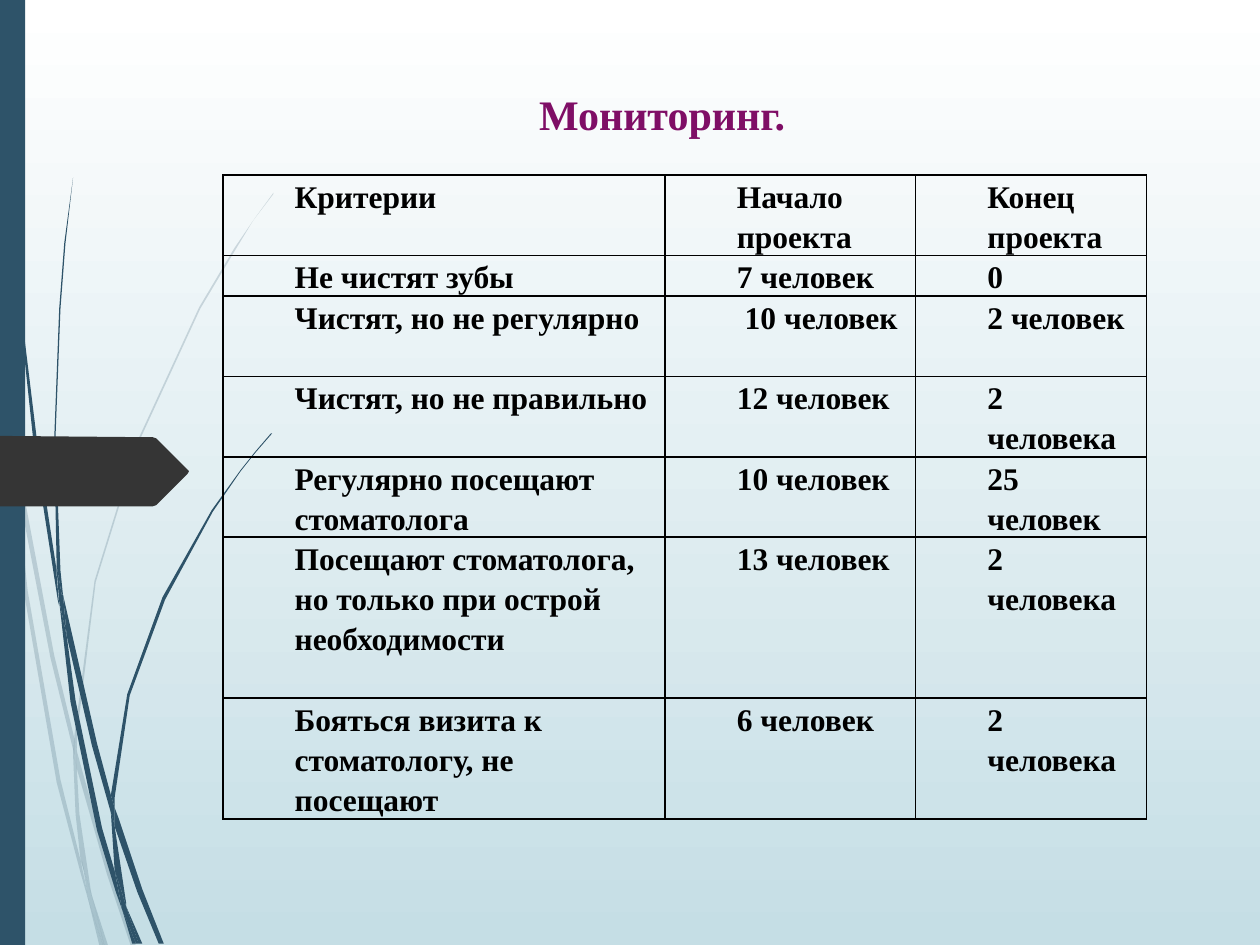
from dataclasses import dataclass

from lxml.etree import SubElement
from pptx import Presentation
from pptx.dml.color import RGBColor
from pptx.enum.shapes import MSO_SHAPE as Shape
from pptx.enum.text import MSO_ANCHOR as Anchor, MSO_AUTO_SIZE as AutoSize, PP_ALIGN as Align
from pptx.oxml.ns import qn
from pptx.util import Pt


@dataclass(frozen=True)
class Theme:
    font: str = "Times New Roman"
    title_size: int = 24
    table_size: int = 18
    title: str = "7F0E66"
    text: str = "000000"
    stem: str = "2E5369"
    arrow: str = "353535"
    sky_top: str = "FFFFFF"
    sky_bottom: str = "C5DEE5"
    pale_opacity: int = 20


THEME = Theme()
UNIT = Pt(0.72)  # one step of the outline coordinates below

PALE_STEMS = [
    [(8, 350), (6, 322), (0, 282), (0, 299), (7, 344)],
    [(40, 522), (59, 599), (59, 586), (43, 520), (10, 345), (12, 376)],
    [(64, 607), (61, 596), (61, 610), (85, 694), (104, 751), (108, 751), (88, 692)],
    [(83, 751), (86, 751), (73, 711)],
    [(64, 683), (48, 619), (22, 469), (12, 376), (8, 350), (19, 470), (45, 621),
     (64, 693), (70, 714), (69, 707)],
    [(58, 599), (60, 646), (64, 683), (67, 692), (73, 711), (72, 706), (63, 646),
     (61, 610), (61, 608)],
    [(61, 584), (76, 462), (111, 349), (159, 245), (187, 198), (201, 175), (217, 154),
     (217, 153), (201, 175), (186, 197), (158, 244), (110, 348), (75, 461), (59, 584),
     (59, 586), (61, 596)],
    [(70, 714), (79, 751), (82, 751)],
    [(61, 608), (61, 610), (61, 596), (59, 586), (58, 599)],
    [(67, 692), (65, 683), (69, 707), (70, 714), (82, 751), (83, 751), (73, 711)],
]
DARK_STEMS = [
    [(5, 110), (14, 233), (27, 355), (46, 477), (47, 481), (45, 457), (45, 453),
     (30, 355), (15, 232), (6, 109), (4, 48), (3, 0), (2, 0), (3, 48)],
    [(73, 592), (88, 645), (88, 633), (88, 631), (77, 590), (50, 472), (53, 505)],
    [(94, 649), (91, 641), (91, 656), (109, 708), (126, 749), (130, 749), (113, 706)],
    [(91, 691), (81, 657), (60, 556), (53, 505), (47, 477), (56, 557), (77, 659),
     (92, 708), (97, 722), (96, 717)],
    [(50, 472), (48, 453), (44, 349), (48, 245), (52, 193), (58, 141), (51, 193),
     (47, 245), (43, 349), (45, 449), (49, 472)],
    [(110, 749), (113, 749), (100, 719)],
    [(47, 477), (53, 505), (50, 472), (49, 472), (45, 449), (45, 453)],
    [(91, 633), (103, 552), (131, 476), (169, 406), (191, 374), (203, 359), (216, 344),
     (215, 344), (203, 358), (191, 373), (168, 405), (129, 474), (101, 551), (88, 631),
     (91, 641)],
    [(97, 722), (105, 749), (108, 749)],
    [(88, 645), (91, 691), (96, 706), (100, 719), (100, 716), (91, 656), (90, 651)],
    [(88, 645), (90, 651), (91, 656), (91, 641), (88, 631), (88, 633)],
    [(96, 706), (91, 691), (96, 717), (97, 722), (108, 749), (110, 749), (100, 719)],
]
PAGE_ARROW = [(0, 346), (111, 347), (121, 347), (124, 348), (149, 373), (149.5, 374.5),
              (149, 376), (124, 401), (121, 402), (0, 402)]

ROWS = [
    ("Критерии", "Начало проекта", "Конец проекта"),
    ("Не чистят зубы", "7 человек", "0"),
    ("Чистят, но не регулярно", " 10 человек", "2 человек"),
    ("Чистят, но не правильно", "12 человек", "2 человека"),
    ("Регулярно посещают стоматолога", "10 человек", "25 человек"),
    ("Посещают стоматолога, но только при острой необходимости", "13 человек", "2 человека"),
    ("Бояться визита к стоматологу, не посещают", "6 человек", "2 человека"),
]
COLUMN_WIDTHS = (252.7, 143.2, 131.8)
LINE_HEIGHT = 23
ROW_LINES = (2, 1, 2, 2, 2, 4, 3)


def rgb(color):
    return RGBColor.from_string(color)


def write_text(frame, text, *, size, color, align=Align.LEFT, indent=0,
               line_spacing=1.0, space_after=0):
    paragraph = frame.paragraphs[0]
    properties = paragraph._p.get_or_add_pPr()
    properties.set("marL", str(Pt(indent)))
    properties.set("indent", "0")
    paragraph.alignment = align
    paragraph.line_spacing = line_spacing
    paragraph.space_after = Pt(space_after)
    run = paragraph.add_run()
    run.text = text
    run.font.name = THEME.font
    run.font.size = Pt(size)
    run.font.bold = True
    run.font.color.rgb = rgb(color)


def paint(shape, color, opacity=100):
    shape.shadow.inherit = False
    shape.line.fill.background()
    shape.fill.solid()
    shape.fill.fore_color.rgb = rgb(color)
    if opacity < 100:
        tint = shape._element.spPr.find(".//" + qn("a:srgbClr"))
        SubElement(tint, qn("a:alpha"), val=str(opacity * 1000))


def add_outline(shapes, points, color, opacity=100):
    builder = shapes.build_freeform(*points[0], scale=UNIT)
    builder.add_line_segments(points[1:], close=True)
    paint(builder.convert_to_shape(), color, opacity)


def add_stems(slide, outlines, opacity):
    group = slide.shapes.add_group_shape()
    for points in outlines:
        add_outline(group.shapes, points, THEME.stem, opacity)


def set_background(slide):
    fill = slide.background.fill
    fill.gradient()
    fill.gradient_angle = 270
    for stop, color in zip(fill.gradient_stops, (THEME.sky_top, THEME.sky_bottom)):
        stop.color.rgb = rgb(color)


def set_title(slide, text):
    title = slide.shapes.title
    title.left, title.top, title.width, title.height = Pt(133.2), Pt(37.4), Pt(490.3), Pt(45.4)
    frame = title.text_frame
    frame.auto_size = AutoSize.NONE
    frame.vertical_anchor = Anchor.BOTTOM
    write_text(frame, text, size=THEME.title_size, color=THEME.title, align=Align.CENTER)


def add_borders(cell):
    properties = cell._tc.get_or_add_tcPr()
    for side in ("lnL", "lnR", "lnT", "lnB"):
        line = SubElement(properties, qn(f"a:{side}"), w=str(Pt(1)))
        fill = SubElement(line, qn("a:solidFill"))
        SubElement(fill, qn("a:srgbClr"), val=THEME.text)


def fill_cell(cell, text):
    cell.margin_left = cell.margin_right = Pt(5)
    cell.margin_top = cell.margin_bottom = Pt(0)
    add_borders(cell)
    cell.fill.background()
    write_text(cell.text_frame, text, size=THEME.table_size, color=THEME.text,
               indent=36, line_spacing=1.15, space_after=10)


def add_monitoring_table(slide):
    frame = slide.shapes.add_table(
        len(ROWS), len(COLUMN_WIDTHS), Pt(127.4), Pt(100.1),
        Pt(sum(COLUMN_WIDTHS)), Pt(LINE_HEIGHT * sum(ROW_LINES)))
    table = frame.table
    table.first_row = table.horz_banding = False
    for column, width in zip(table.columns, COLUMN_WIDTHS):
        column.width = Pt(width)
    for row, lines, texts in zip(table.rows, ROW_LINES, ROWS):
        row.height = Pt(LINE_HEIGHT * lines)
        for cell, text in zip(row.cells, texts):
            fill_cell(cell, text)


def main():
    presentation = Presentation()
    presentation.slide_width, presentation.slide_height = Pt(720), Pt(540)
    slide = presentation.slides.add_slide(presentation.slide_layouts[5])
    set_background(slide)
    add_stems(slide, PALE_STEMS, THEME.pale_opacity)
    add_stems(slide, DARK_STEMS, 100)
    side_bar = slide.shapes.add_shape(Shape.RECTANGLE, Pt(0), Pt(0), Pt(14.4), Pt(540))
    paint(side_bar, THEME.stem)
    add_outline(slide.shapes, PAGE_ARROW, THEME.arrow)
    set_title(slide, "Мониторинг.")
    add_monitoring_table(slide)
    presentation.save("out.pptx")


if __name__ == "__main__":
    main()
